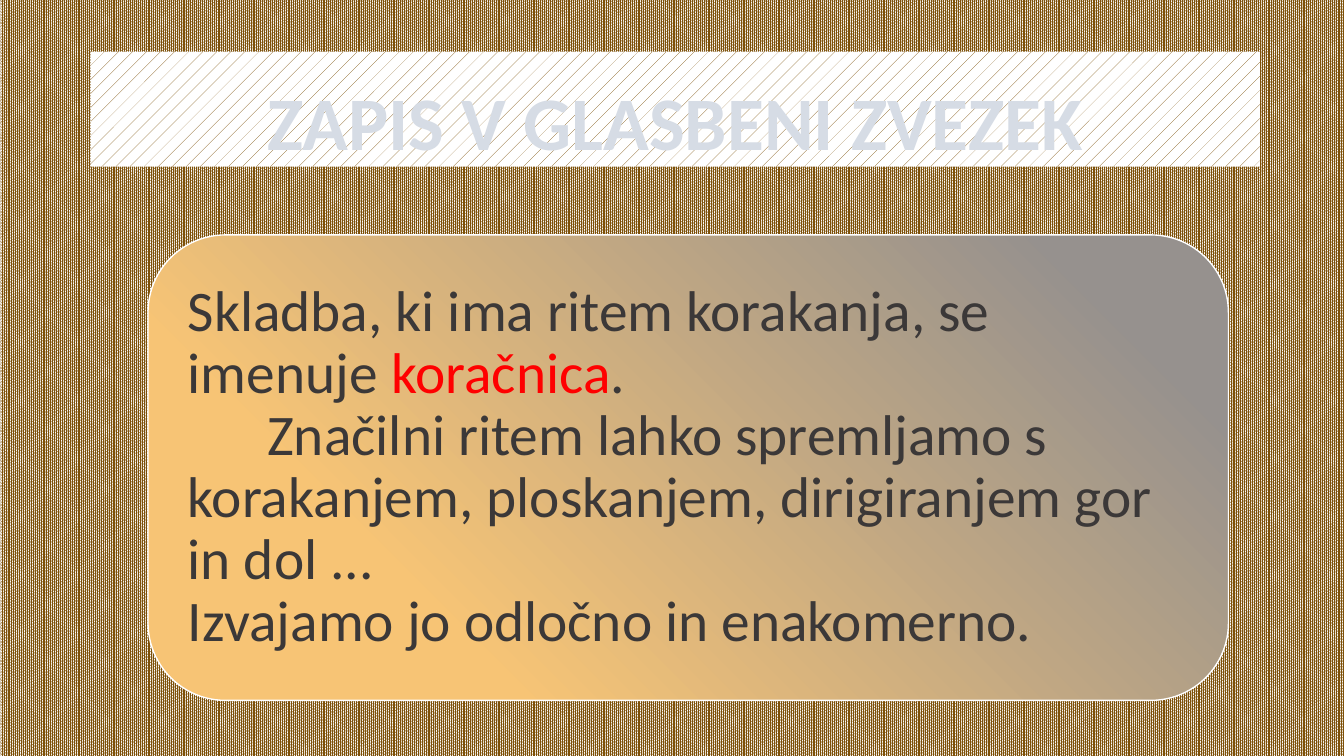
"""Builds the slide on writing about the march in the music notebook."""
from pptx import Presentation
from pptx.dml.color import RGBColor
from pptx.enum.dml import MSO_PATTERN
from pptx.enum.shapes import MSO_SHAPE
from pptx.enum.text import MSO_ANCHOR, PP_ALIGN
from pptx.util import Cm, Pt

BACKGROUND_PATTERN = MSO_PATTERN.PERCENT_90
TITLE_PATTERN = MSO_PATTERN.PERCENT_5
RECTANGLE = MSO_SHAPE.RECTANGLE
ROUNDED_RECTANGLE = MSO_SHAPE.ROUNDED_RECTANGLE
MIDDLE, BOTTOM = MSO_ANCHOR.MIDDLE, MSO_ANCHOR.BOTTOM
LEFT, CENTER = PP_ALIGN.LEFT, PP_ALIGN.CENTER

BROWN = RGBColor(0x7D, 0x50, 0x08)
WHITE = RGBColor(0xFF, 0xFF, 0xFF)
PALE_BLUE = RGBColor(0xD6, 0xDC, 0xE5)
YELLOW = RGBColor(0xF7, 0xC4, 0x75)
GREY = RGBColor(0x96, 0x91, 0x8E)
DARK_GREY = RGBColor(0x3B, 0x38, 0x38)
RED = RGBColor(0xFF, 0x00, 0x00)
FONT = "Calibri"


def set_pattern(fill, pattern):
    fill.patterned()
    fill.pattern = pattern
    fill.fore_color.rgb = BROWN
    fill.back_color.rgb = WHITE


def add_run(paragraph, text, size, color, bold=False):
    run = paragraph.add_run()
    run.text = text
    run.font.name = FONT
    run.font.size = Pt(size)
    run.font.bold = bold
    run.font.color.rgb = color


presentation = Presentation()
presentation.slide_width = Cm(33.87)
presentation.slide_height = Cm(19.05)
slide = presentation.slides.add_slide(presentation.slide_layouts[6])
set_pattern(slide.background.fill, BACKGROUND_PATTERN)

title = slide.shapes.add_shape(RECTANGLE, Cm(2.29), Cm(1.3), Cm(29.46), Cm(2.9))
title.shadow.inherit = False
set_pattern(title.fill, TITLE_PATTERN)
title.line.fill.background()
title_frame = title.text_frame
title_frame.word_wrap = True
title_frame.vertical_anchor = BOTTOM
title_frame.margin_top = title_frame.margin_bottom = 0
title_paragraph = title_frame.paragraphs[0]
title_paragraph.alignment = CENTER
title_paragraph.line_spacing = 0.9
add_run(title_paragraph, "ZAPIS V GLASBENI ZVEZEK", 54, PALE_BLUE, bold=True)

panel = slide.shapes.add_shape(ROUNDED_RECTANGLE, Cm(3.73), Cm(5.92), Cm(27.23), Cm(11.73))
panel.shadow.inherit = False
panel.fill.gradient()
panel.fill.gradient_angle = 45
for stop, (position, color) in zip(panel.fill.gradient_stops, [(0.24, YELLOW), (0.88, GREY)]):
    stop.position = position
    stop.color.rgb = color
panel.line.color.rgb = WHITE
panel.line.width = Pt(1)

panel_frame = panel.text_frame
panel_frame.word_wrap = True
panel_frame.vertical_anchor = MIDDLE
panel_frame.margin_left = panel_frame.margin_top = panel_frame.margin_bottom = Cm(0.43)
panel_frame.margin_right = Cm(0.7)

notes = [
    (0, [("Skladba, ki ima ritem korakanja, se imenuje ", DARK_GREY), ("koračnica", RED), (".", DARK_GREY)]),
    (2, [("Značilni ritem lahko spremljamo s korakanjem, ploskanjem, dirigiranjem gor in dol ...", DARK_GREY)]),
    (0, [("Izvajamo jo odločno in enakomerno.", DARK_GREY)]),
]
for index, (indent, runs) in enumerate(notes):
    paragraph = panel_frame.add_paragraph() if index else panel_frame.paragraphs[0]
    paragraph.alignment = LEFT
    paragraph.line_spacing = 0.9
    paragraph._p.get_or_add_pPr().set("indent", str(Cm(indent)))
    for text, color in runs:
        add_run(paragraph, text, 41, color)

presentation.save("out.pptx")
